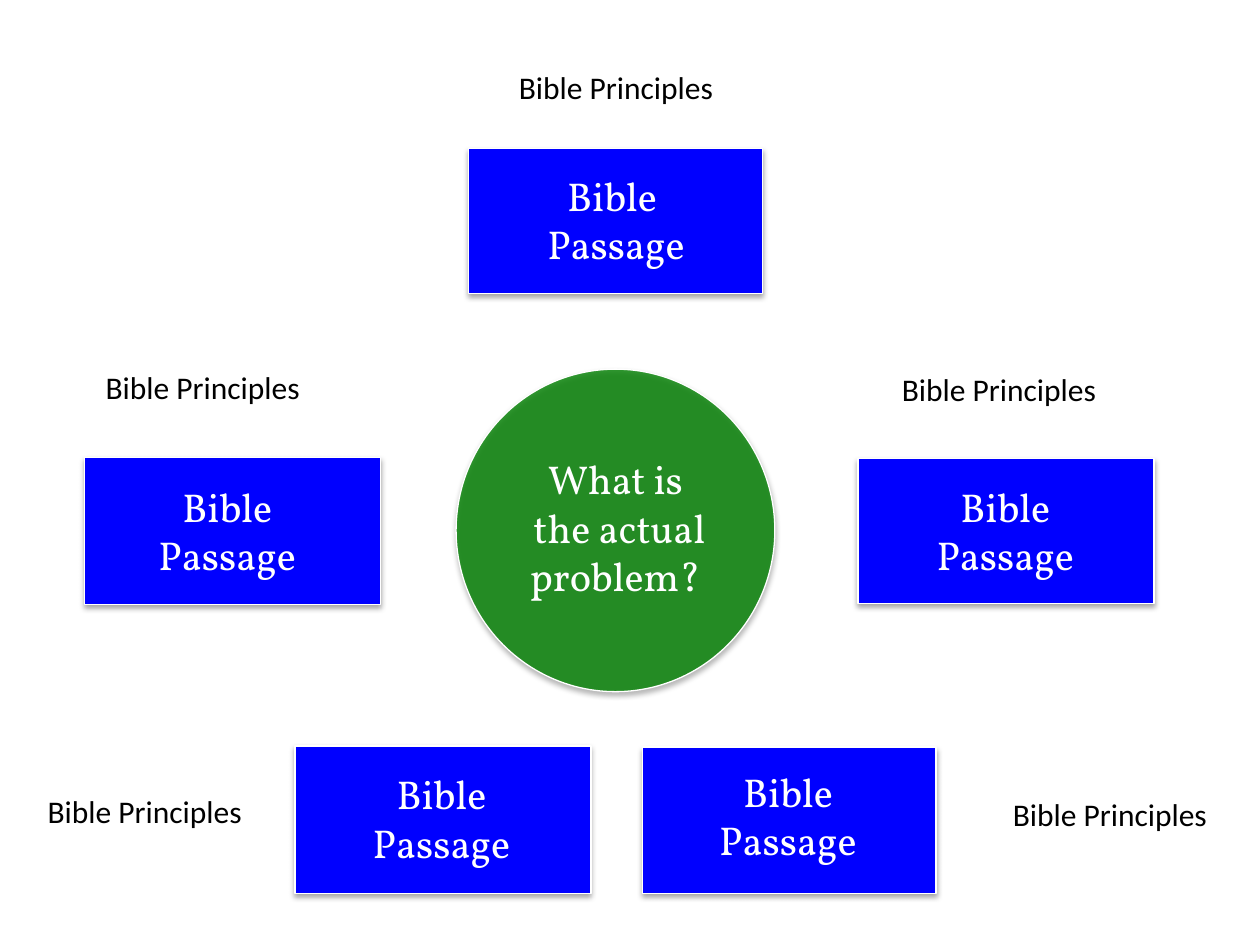
from lxml.etree import SubElement
from pptx import Presentation
from pptx.dml.color import RGBColor
from pptx.enum.shapes import MSO_SHAPE as Shape
from pptx.enum.text import MSO_AUTO_SIZE as AutoSize, PP_ALIGN as Align
from pptx.oxml.ns import qn
from pptx.util import Inches, Pt

# Grid of 100 columns by 75 rows; boxes are (column, row, columns, rows)
WIDTH, HEIGHT = Inches(10), Inches(7.5)
COLUMNS, ROWS = 100, 75

WHITE, BLACK, BLUE, GREEN = "FFFFFF", "000000", "0000FF", "008000"
SERIF = {"name": "Vollkorn", "size": Pt(23)}
SANS = {"name": "Calibri", "size": Pt(18)}

PASSAGE = ["Bible", "Passage"]
CAPTION = ["Bible Principles"]
QUESTION = ["What is", " the actual ", "problem?"]

# Each passage: rectangle, its words, the box for the words, the caption box
PASSAGES = [
    ((37.2, 11.8, 23.3, 11.5), ["Bible ", "Passage"], (36.5, 13.1, 24.8, 8.8), (40.2, 4.9, 17.6, 4)),
    ((6.7, 36.3, 23.5, 11.7), PASSAGE, (11.4, 37.8, 13.3, 8.8), (7.4, 28.7, 20, 4)),
    ((68.1, 36.4, 23.5, 11.5), PASSAGE, (68.1, 37.8, 23.4, 8.8), (70.6, 28.9, 20.3, 4)),
    ((23.4, 59.2, 23.5, 11.7), PASSAGE, (21.7, 60.6, 26.7, 8.8), (2.8, 62.4, 17.6, 4)),
    ((51, 59.3, 23.3, 11.6), PASSAGE, (50.8, 60.4, 23.5, 8.8), (79.4, 62.6, 17.6, 4)),
]


def colour(value):
    return RGBColor.from_string(value)


def place(box):
    """Turn a grid box into slide lengths."""
    left, top, width, height = box
    column, row = WIDTH / COLUMNS, HEIGHT / ROWS
    return [int(n) for n in (left * column, top * row, width * column, height * row)]


def add_shadow(shape):
    effects = SubElement(shape._element.spPr, qn("a:effectLst"))
    shadow = SubElement(effects, qn("a:outerShdw"), blurRad=str(Pt(3.1)),
                        dist=str(Pt(1.8)), dir="5400000", rotWithShape="0")
    black = SubElement(shadow, qn("a:srgbClr"), val=BLACK)
    SubElement(black, qn("a:alpha"), val="35000")


def add_figure(slide, kind, box, fill, opacity=100):
    shape = slide.shapes.add_shape(kind, *place(box))
    shape.fill.solid()
    shape.fill.fore_color.rgb = colour(fill)
    if opacity < 100:
        fill_colour = shape._element.spPr.find(qn("a:solidFill"))[0]
        SubElement(fill_colour, qn("a:alpha"), val=str(opacity * 1000))
    shape.line.color.rgb = colour(WHITE)
    shape.line.width = Pt(0.75)
    add_shadow(shape)


def add_words(slide, box, lines, font, text_colour, align):
    frame = slide.shapes.add_textbox(*place(box)).text_frame
    frame.word_wrap = True
    frame.auto_size = AutoSize.SHAPE_TO_FIT_TEXT
    for index, line in enumerate(lines):
        paragraph = frame.add_paragraph() if index else frame.paragraphs[0]
        paragraph.alignment = align
        run = paragraph.add_run()
        run.text = line
        for key, value in font.items():
            setattr(run.font, key, value)
        run.font.color.rgb = colour(text_colour)
    # Single-width boxes stay on their lines whatever the font's exact width
    frame.word_wrap = box[2] >= 20


def add_passage(slide, box, words, words_box, caption_box):
    add_figure(slide, Shape.RECTANGLE, box, BLUE)
    add_words(slide, words_box, words, SERIF, WHITE, Align.CENTER)
    add_words(slide, caption_box, CAPTION, SANS, BLACK, Align.LEFT)


def add_question(slide, box, words_box):
    add_figure(slide, Shape.OVAL, box, GREEN, opacity=80)
    add_words(slide, words_box, QUESTION, SERIF, WHITE, Align.CENTER)


def main():
    presentation = Presentation()
    presentation.slide_width, presentation.slide_height = WIDTH, HEIGHT
    slide = presentation.slides.add_slide(presentation.slide_layouts[6])

    # Passages around the central question
    for passage in PASSAGES:
        add_passage(slide, *passage)
    add_question(slide, (36.2, 29.3, 25.3, 25.6), (40.5, 35.6, 16.7, 12.6))

    presentation.save("out.pptx")


if __name__ == "__main__":
    main()
